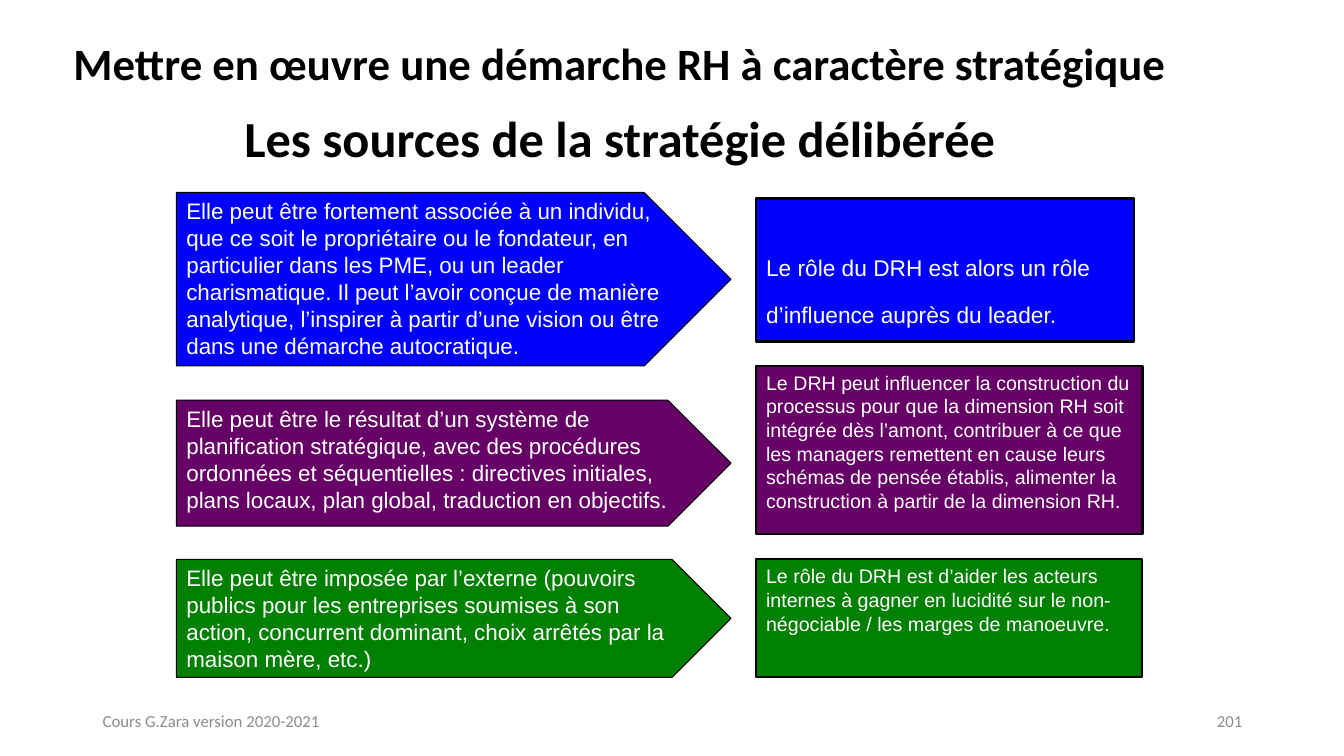
from dataclasses import dataclass

from pptx import Presentation
from pptx.dml.color import RGBColor
from pptx.enum.shapes import MSO_SHAPE
from pptx.enum.text import MSO_ANCHOR, PP_ALIGN
from pptx.util import Emu, Pt


@dataclass(frozen=True)
class Theme:
    heading_font: str = "Calibri"
    box_font: str = "Arial"
    black: str = "000000"
    white: str = "FFFFFF"
    gray: str = "8C8C8C"
    blue: str = "0000FF"
    purple: str = "660066"
    green: str = "008000"
    title_size: int = 32
    subtitle_size: int = 36
    source_size: int = 16
    role_size: int = 14
    raised_size: int = 28
    footer_size: int = 12


THEME = Theme()
PX = 9144  # 100 px to the inch


def write(shape, text, font, size, color, bold=False,
          align=PP_ALIGN.LEFT, anchor=MSO_ANCHOR.TOP, spacing=1.0):
    frame = shape.text_frame
    frame.word_wrap = True
    frame.vertical_anchor = anchor
    paragraph = frame.paragraphs[0]
    paragraph.alignment = align
    paragraph.line_spacing = spacing
    run = paragraph.add_run()
    run.text = text
    run.font.name = font
    run.font.size = Pt(size)
    run.font.bold = bold
    run.font.color.rgb = RGBColor.from_string(color)
    return run


def add_box(kind, bounds, fill, line_width):
    box = slide.shapes.add_shape(kind, *[Emu(v * PX) for v in bounds])
    box.shadow.inherit = False
    box.fill.solid()
    box.fill.fore_color.rgb = RGBColor.from_string(fill)
    box.line.color.rgb = RGBColor.from_string(THEME.black)
    box.line.width = Pt(line_width)
    return box


deck = Presentation()
deck.slide_width, deck.slide_height = Emu(1333 * PX), Emu(750 * PX)
slide = deck.slides.add_slide(deck.slide_layouts[6])

# Headings and footer: bounds, text, size, colour, bold, alignment, anchor, spacing
labels = [
    ((63, 3, 1178, 125), "Mettre en œuvre une démarche RH à caractère stratégique",
     THEME.title_size, THEME.black, True, PP_ALIGN.LEFT, MSO_ANCHOR.MIDDLE, 0.9),
    ((165, 108, 900, 50), "Les sources de la stratégie délibérée",
     THEME.subtitle_size, THEME.black, True, PP_ALIGN.CENTER, MSO_ANCHOR.TOP, 0.9),
    ((92, 695, 300, 40), "Cours G.Zara version 2020-2021",
     THEME.footer_size, THEME.gray, False, PP_ALIGN.LEFT, MSO_ANCHOR.MIDDLE, 1.0),
    ((942, 695, 300, 40), "201",
     THEME.footer_size, THEME.gray, False, PP_ALIGN.RIGHT, MSO_ANCHOR.MIDDLE, 1.0),
]
for bounds, text, *style in labels:
    label = slide.shapes.add_textbox(*[Emu(v * PX) for v in bounds])
    write(label, text, THEME.heading_font, *style)

# Sources of the strategy: top, height, colour, text
SOURCE_LEFT, SOURCE_WIDTH = 175, 550
sources = [
    (191, 172, THEME.blue,
     "Elle peut être fortement associée à un individu, que ce soit le propriétaire "
     "ou le fondateur, en particulier dans les PME, ou un leader charismatique. "
     "Il peut l’avoir conçue de manière analytique, l’inspirer à partir d’une vision "
     "ou être dans une démarche autocratique."),
    (397, 125, THEME.purple,
     "Elle peut être le résultat d’un système de planification stratégique, avec des "
     "procédures ordonnées et séquentielles : directives initiales, plans locaux, "
     "plan global, traduction en objectifs."),
    (555, 117, THEME.green,
     "Elle peut être imposée par l’externe (pouvoirs publics pour les entreprises "
     "soumises à son action, concurrent dominant, choix arrêtés par la maison mère, etc.)"),
]
for top, height, color, text in sources:
    source = add_box(MSO_SHAPE.PENTAGON, (SOURCE_LEFT, top, SOURCE_WIDTH, height), color, 0.75)
    write(source, text, THEME.box_font, THEME.source_size, THEME.white)

# Role of the HR director: top, width, height, colour, line width, text size, text
ROLE_LEFT = 750
roles = [
    (197, 375, 142, THEME.blue, 1.75, THEME.raised_size,
     "Le rôle du DRH est alors un rôle d’influence auprès du leader."),
    (363, 383, 167, THEME.purple, 1.75, THEME.role_size,
     "Le DRH peut influencer la construction du processus pour que la dimension RH "
     "soit intégrée dès l’amont, contribuer à ce que les managers remettent en cause "
     "leurs schémas de pensée établis, alimenter la construction à partir de la "
     "dimension RH."),
    (555, 383, 117, THEME.green, 1.5, THEME.role_size,
     "Le rôle du DRH est d’aider les acteurs internes à gagner en lucidité sur le "
     "non-négociable / les marges de manoeuvre."),
]
for top, width, height, color, line_width, size, text in roles:
    role = add_box(MSO_SHAPE.RECTANGLE, (ROLE_LEFT, top, width, height), color, line_width)
    role_run = write(role, text, THEME.box_font, size, THEME.white)
    if size == THEME.raised_size:
        # Superscript text, set one line lower
        role.text_frame.margin_top = Emu(50 * PX)
        role_run._r.get_or_add_rPr().set("baseline", "30000")

deck.save("out.pptx")
